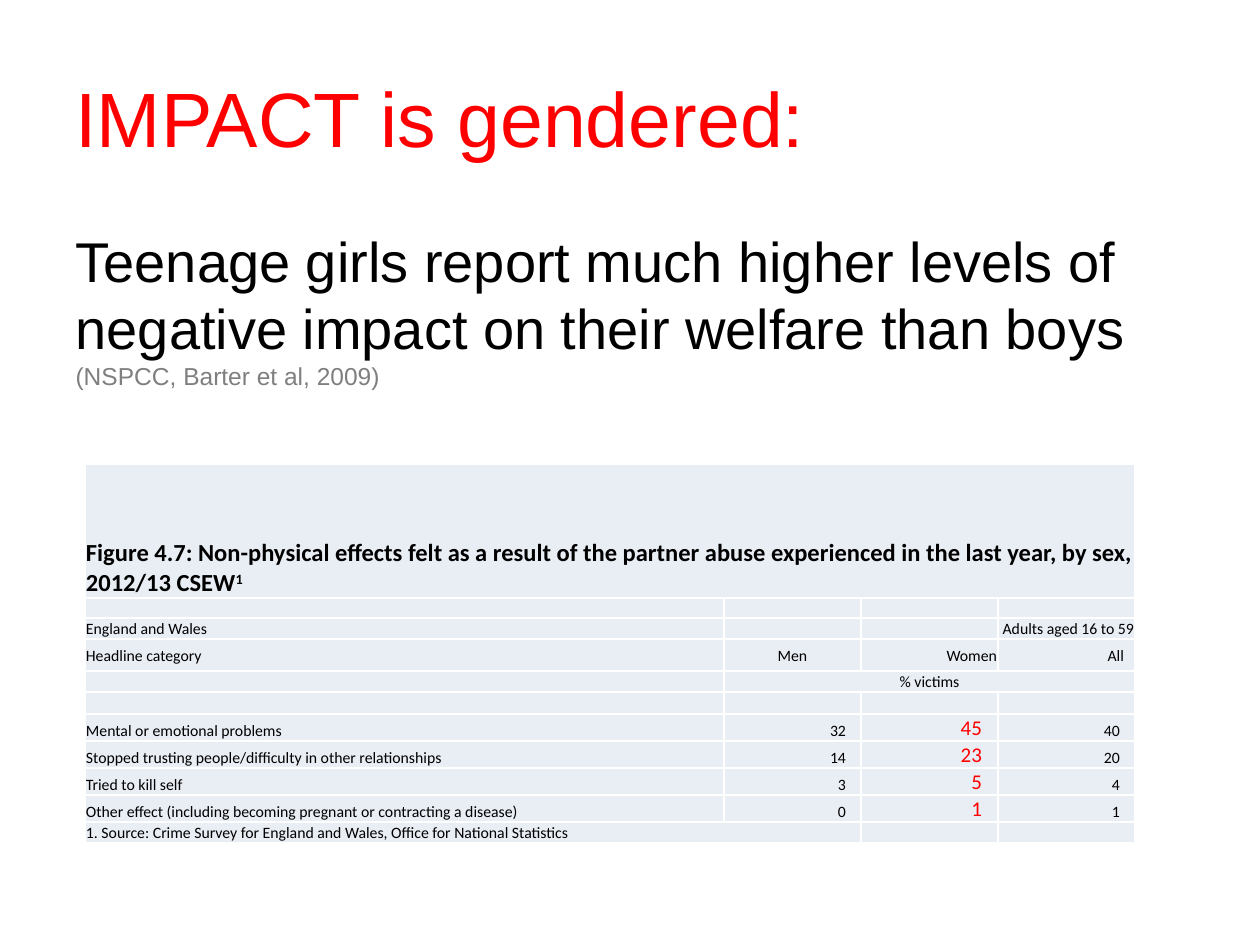
from lxml.etree import SubElement
from pptx import Presentation
from pptx.dml.color import RGBColor
from pptx.enum.text import MSO_ANCHOR, MSO_AUTO_SIZE, PP_ALIGN
from pptx.oxml.ns import qn
from pptx.util import Emu, Pt

PX_PER_INCH = 126
RED = RGBColor(0xFF, 0x00, 0x00)
BLACK = RGBColor(0x00, 0x00, 0x00)
GREY = RGBColor(0x7F, 0x7F, 0x7F)
WHITE = RGBColor(0xFF, 0xFF, 0xFF)
PALE_BLUE = RGBColor(0xE9, 0xED, 0xF4)

TITLE_FONT = {"name": "Arial", "size": Pt(44)}
BODY_FONT = {"name": "Arial", "size": Pt(32)}
CITATION_FONT = {"name": "Arial", "size": Pt(14)}
CAPTION_FONT = {"name": "Calibri", "size": Pt(14), "bold": True}
CELL_FONT = {"name": "Calibri", "size": Pt(9), "bold": False}
WOMEN_FONT = {**CELL_FONT, "size": Pt(12)}

COLUMN_WIDTHS = [639, 137, 137, 137]
ROW_HEIGHTS = [134, 20, 21, 32, 21, 22, 27, 27, 27, 27, 20]
FIRST_EFFECT_ROW = 6
EFFECTS = [
    ("Mental or emotional problems", 32, 45, 40),
    ("Stopped trusting people/difficulty in other relationships", 14, 23, 20),
    ("Tried to kill self", 3, 5, 4),
    ("Other effect (including becoming pregnant or contracting a disease)", 0, 1, 1),
]


def px(length):
    return Emu(round(length * 914400 / PX_PER_INCH))


def set_attributes(target, values):
    for name, value in values.items():
        setattr(target, name, value)


def add_run(paragraph, text, font, color=BLACK):
    run = paragraph.add_run()
    run.text = text
    set_attributes(run.font, font)
    run.font.color.rgb = color
    return run


def place(placeholder, left, top, width, height):
    """Move a placeholder and return its left-aligned first paragraph."""
    set_attributes(placeholder, {"left": px(left), "top": px(top),
                                 "width": px(width), "height": px(height)})
    set_attributes(placeholder.text_frame, {"word_wrap": True,
                                            "auto_size": MSO_AUTO_SIZE.NONE})
    paragraph = placeholder.text_frame.paragraphs[0]
    paragraph.alignment = PP_ALIGN.LEFT
    return paragraph


def add_title(slide):
    paragraph = place(slide.shapes.title, 63, 38, 1134, 157)
    slide.shapes.title.text_frame.vertical_anchor = MSO_ANCHOR.MIDDLE
    add_run(paragraph, "IMPACT is gendered:", TITLE_FONT, RED)


def add_finding(slide):
    paragraph = place(slide.placeholders[1], 63, 220, 1134, 624)
    properties = paragraph._p.get_or_add_pPr()
    properties.set("marL", "0")
    properties.set("indent", "0")
    SubElement(properties, qn("a:buNone"))
    paragraph.space_before = Pt(0)
    add_run(paragraph, "Teenage girls report much higher levels of negative impact "
                       "on their welfare than boys ", BODY_FONT)
    add_run(paragraph, "(NSPCC, Barter et al, 2009)", CITATION_FONT, GREY)


def style_cell(cell):
    """Give a cell its fill, white borders and a small size while empty."""
    set_attributes(cell, {"margin_left": px(1), "margin_right": px(1),
                          "margin_top": px(1), "margin_bottom": 0})
    properties = cell._tc.get_or_add_tcPr()
    for side in ("a:lnL", "a:lnR", "a:lnT", "a:lnB"):
        line = SubElement(properties, qn(side), w=str(Pt(1)))
        fill = SubElement(line, qn("a:solidFill"))
        SubElement(fill, qn("a:srgbClr"), val=str(WHITE))
    cell.fill.solid()
    cell.fill.fore_color.rgb = PALE_BLUE
    paragraph = cell.text_frame.paragraphs[0]
    SubElement(paragraph._p, qn("a:endParaRPr"), sz="900")


def write_cell(cell, text, align=PP_ALIGN.LEFT, anchor=MSO_ANCHOR.BOTTOM,
               font=CELL_FONT, color=BLACK, right=1):
    set_attributes(cell, {"vertical_anchor": anchor, "margin_right": px(right)})
    paragraph = cell.text_frame.paragraphs[0]
    paragraph.alignment = align
    add_run(paragraph, text, font, color)
    return paragraph


def add_effects_table(slide):
    table = slide.shapes.add_table(
        len(ROW_HEIGHTS), len(COLUMN_WIDTHS), px(85), px(464),
        px(sum(COLUMN_WIDTHS)), px(sum(ROW_HEIGHTS))).table
    set_attributes(table, {"first_row": False, "horz_banding": False})
    for column, width in zip(table.columns, COLUMN_WIDTHS):
        column.width = px(width)
    for row, height in zip(table.rows, ROW_HEIGHTS):
        row.height = px(height)
    for cell in table.iter_cells():
        style_cell(cell)

    source_row = len(ROW_HEIGHTS) - 1
    table.cell(0, 0).merge(table.cell(0, 3))
    table.cell(4, 1).merge(table.cell(4, 3))
    table.cell(source_row, 0).merge(table.cell(source_row, 1))

    caption = write_cell(
        table.cell(0, 0),
        "Figure 4.7: Non-physical effects felt as a result of the partner abuse "
        "experienced in the last year, by sex, 2012/13 CSEW", font=CAPTION_FONT)
    footnote_mark = add_run(caption, "1", CAPTION_FONT)
    footnote_mark._r.get_or_add_rPr().set("baseline", "30000")

    write_cell(table.cell(2, 0), "England and Wales")
    write_cell(table.cell(2, 3), "Adults aged 16 to 59", PP_ALIGN.RIGHT)
    headings = [("Headline category", PP_ALIGN.LEFT, 1), ("Men", PP_ALIGN.CENTER, 1),
                ("Women", PP_ALIGN.RIGHT, 1), ("All", PP_ALIGN.RIGHT, 11)]
    for column, (heading, align, right) in enumerate(headings):
        write_cell(table.cell(3, column), heading, align, MSO_ANCHOR.MIDDLE, right=right)
    write_cell(table.cell(4, 1), "% victims", PP_ALIGN.CENTER, MSO_ANCHOR.MIDDLE)

    value_formats = [{"right": 15},
                     {"right": 16, "font": WOMEN_FONT, "color": RED},
                     {"right": 15}]
    for row, (effect, *values) in enumerate(EFFECTS, FIRST_EFFECT_ROW):
        write_cell(table.cell(row, 0), effect)
        for column, (value, formats) in enumerate(zip(values, value_formats), 1):
            write_cell(table.cell(row, column), str(value), PP_ALIGN.RIGHT, **formats)
    write_cell(table.cell(source_row, 0),
               "1. Source: Crime Survey for England and Wales, "
               "Office for National Statistics")


def main():
    presentation = Presentation()
    presentation.slide_width = px(1260)
    presentation.slide_height = px(945)
    slide = presentation.slides.add_slide(presentation.slide_layouts[1])
    add_title(slide)
    add_finding(slide)
    add_effects_table(slide)
    presentation.save("out.pptx")


if __name__ == "__main__":
    main()
